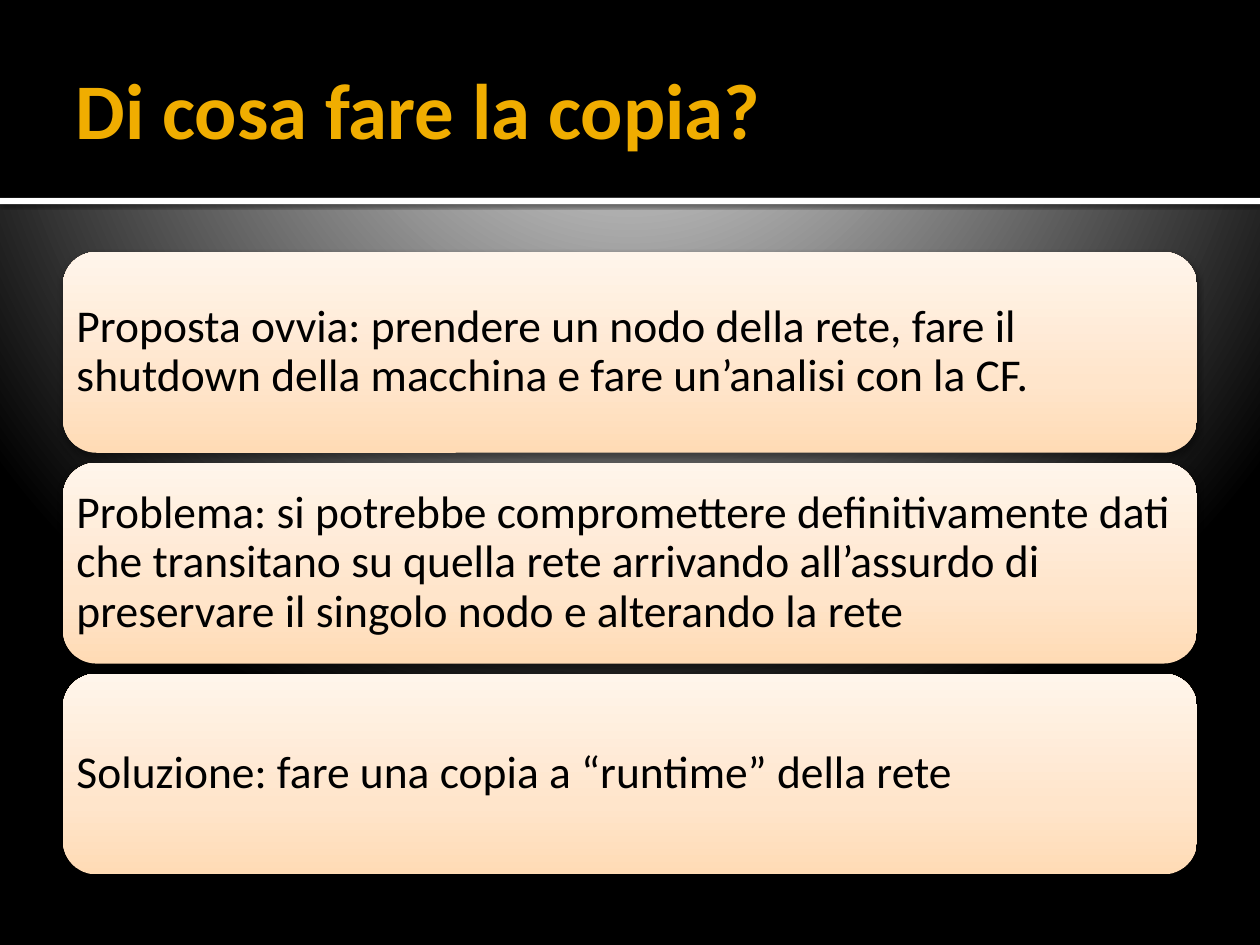
from lxml import etree
from pptx import Presentation
from pptx.dml.color import RGBColor
from pptx.enum import shapes, text
from pptx.oxml import ns
from pptx.util import Inches, Pt

BLACK = RGBColor(0x00, 0x00, 0x00)
WHITE = RGBColor(0xFF, 0xFF, 0xFF)
AMBER = RGBColor(0xF0, 0xAD, 0x00)
SILVER = RGBColor(0xC0, 0xC0, 0xC0)
GREY = RGBColor(0xBE, 0xBE, 0xBE)
PEACH = RGBColor(0xFF, 0xDB, 0xB5)
APRICOT = RGBColor(0xFF, 0xE5, 0xCB)
CREAM = RGBColor(0xFF, 0xF5, 0xEB)

FONT = "Calibri"
BACKDROP_STOPS = [(0, SILVER), (12, SILVER), (20, GREY), (100, BLACK)]
CARD_STOPS = [(0, PEACH), (35, APRICOT), (100, CREAM)]
CARDS = [
    "Proposta ovvia: prendere un nodo della rete, fare il shutdown della "
    "macchina e fare un’analisi con la CF.",
    "Problema: si potrebbe compromettere definitivamente dati che transitano "
    "su quella rete arrivando all’assurdo di preservare il singolo nodo e "
    "alterando la rete",
    "Soluzione: fare una copia a “runtime” della rete",
]


def add_xml(parent, tag, **attrs):
    return etree.SubElement(parent, ns.qn(tag), {k: str(v) for k, v in attrs.items()})


def set_gradient(props, stops):
    """Swap the solid fill in props for a gradient and return it."""
    solid = props.find(ns.qn("a:solidFill"))
    grad = etree.Element(ns.qn("a:gradFill"), rotWithShape="1")
    stop_list = add_xml(grad, "a:gsLst")
    for pos, color in stops:
        stop = add_xml(stop_list, "a:gs", pos=pos * 1000)
        add_xml(stop, "a:srgbClr", val=color)
    props.replace(solid, grad)
    return grad


def set_shadow(sp, alpha, blur, dist):
    """Give the shape a black shadow that falls straight down."""
    sp.shadow.inherit = False
    effects = sp.element.spPr.find(ns.qn("a:effectLst"))
    shadow = add_xml(effects, "a:outerShdw", blurRad=Pt(blur), dist=Pt(dist),
                     dir=90 * 60000, algn="t", rotWithShape=0)
    color = add_xml(shadow, "a:srgbClr", val=BLACK)
    add_xml(color, "a:alpha", val=alpha * 1000)


def add_box(s, kind, x, y, w, h, color):
    sp = s.shapes.add_shape(kind, x, y, w, h)
    sp.fill.solid()
    sp.fill.fore_color.rgb = color
    sp.line.fill.background()
    sp.shadow.inherit = False
    return sp


def set_text(tf, words, size, color, margins):
    tf.word_wrap = True
    tf.auto_size = text.MSO_AUTO_SIZE.NONE
    tf.vertical_anchor = text.MSO_ANCHOR.MIDDLE
    tf.margin_left, tf.margin_top, tf.margin_right, tf.margin_bottom = map(Inches, margins)
    tf.text = words
    p = tf.paragraphs[0]
    p.alignment = text.PP_ALIGN.LEFT
    p.font.name, p.font.size, p.font.color.rgb = FONT, Pt(size), color
    return p


def add_backdrop(s):
    """Radial glow that spreads from above the slide."""
    s.background.fill.solid()
    props = s.element.find(".//" + ns.qn("p:bgPr"))
    path = add_xml(set_gradient(props, BACKDROP_STOPS), "a:path", path="circle")
    add_xml(path, "a:fillToRect", l=10000, t=-25000, r=10000, b=125000)


def add_header(s, x, y, w, h):
    rect = shapes.MSO_SHAPE.RECTANGLE

    # White rule under the black band
    rule = add_box(s, rect, x, y + h, w, Inches(0.05), WHITE)
    set_shadow(rule, 60, 2.5, 0.8)
    add_box(s, rect, x, y, w, h, BLACK)

    # Title, brought in front of the band
    title = s.shapes.title
    title.left, title.top = x + Inches(0.5), y + Inches(0.17)
    title.width, title.height = w - Inches(1), Inches(1.37)
    p = set_text(title.text_frame, "Di cosa fare la copia?", 45, AMBER,
                 (0.1, 0.05, 0.05, 0.05))
    p.font.bold = True
    title.element.getparent().append(title.element)


def add_cards(s, x, y, w, h, gap):
    """Stack equal rounded cards in the box."""
    card_h = (h - gap * (len(CARDS) - 1)) // len(CARDS)
    for i, words in enumerate(CARDS):
        card = add_box(s, shapes.MSO_SHAPE.ROUNDED_RECTANGLE,
                       x, y + i * (card_h + gap), w, card_h, PEACH)
        grad = set_gradient(card.element.spPr, CARD_STOPS)
        add_xml(grad, "a:lin", ang=270 * 60000, scaled=0)
        set_shadow(card, 38, 3.5, 2)
        p = set_text(card.text_frame, words, 26, BLACK, (0.03,) * 4)
        p.line_spacing = 0.9


def main():
    prs = Presentation()
    prs.slide_width, prs.slide_height = Inches(10), Inches(7.5)
    s = prs.slides.add_slide(prs.slide_layouts[5])
    add_backdrop(s)
    add_header(s, 0, 0, prs.slide_width, Inches(1.57))
    add_cards(s, Inches(0.5), Inches(2), Inches(9), Inches(4.94), Inches(0.08))
    prs.save("out.pptx")


if __name__ == "__main__":
    main()
